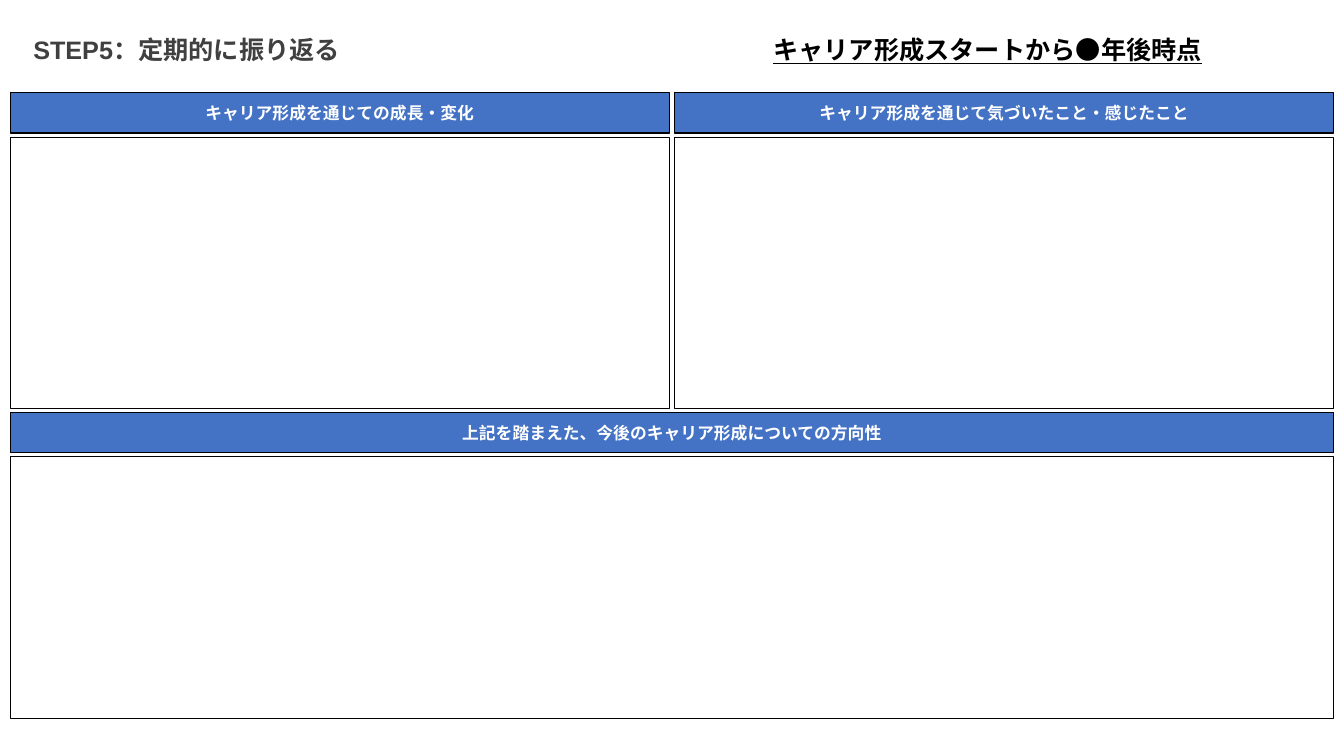
import pptx
import pptx.dml.color
import pptx.enum.shapes
import pptx.enum.text
import pptx.oxml
import pptx.oxml.ns
import pptx.util
from pptx.util import Inches

COLORS = {"header": "4472C4", "white": "FFFFFF", "black": "000000", "title": "404040"}
LATIN_FONT = "Arial"
JAPANESE_FONT = "Noto Sans CJK JP"
ALIGN = pptx.enum.text.PP_ALIGN
ANCHOR = pptx.enum.text.MSO_ANCHOR

# Layout in inches
LEFT, TOP, WIDTH = 0.1, 0.92, 13.13
COLUMN_GAP, ROW_GAP = 0.05, 0.04
HEADER_HEIGHT = 0.4


def rgb(name):
    return pptx.dml.color.RGBColor.from_string(COLORS[name])


def write_text(shape, text, size=12, color="black", font=LATIN_FONT,
               align=ALIGN.CENTER, anchor=ANCHOR.TOP, underline=None, wrap=True,
               fit=pptx.enum.text.MSO_AUTO_SIZE.NONE):
    frame = shape.text_frame
    frame.word_wrap = wrap
    frame.auto_size = fit
    frame.vertical_anchor = anchor
    para = frame.paragraphs[0]
    para.alignment = align
    span = para.add_run()
    span.text = text
    span.font.size = pptx.util.Pt(size)
    span.font.bold = True
    span.font.underline = underline
    span.font.color.rgb = rgb(color)
    span.font.name = font
    # Typeface for the Japanese characters
    east_asian = pptx.oxml.parse_xml(
        f'<a:ea {pptx.oxml.ns.nsdecls("a")} typeface="{JAPANESE_FONT}"/>')
    span.font.fill._xPr.append(east_asian)


def add_panel(page, left, top, width, height, fill):
    panel = page.shapes.add_shape(
        pptx.enum.shapes.MSO_SHAPE.RECTANGLE,
        Inches(left), Inches(top), Inches(width), Inches(height))
    panel.shadow.inherit = False
    panel.fill.solid()
    panel.fill.fore_color.rgb = rgb(fill)
    panel.line.color.rgb = rgb("black")
    panel.line.width = pptx.util.Pt(0.75)
    return panel


def add_section(page, heading, left, top, width, height):
    """A heading bar above an empty answer area, filling the given box."""
    header = add_panel(page, left, top, width, HEADER_HEIGHT, "header")
    write_text(header, heading, color="white", anchor=ANCHOR.MIDDLE, wrap=False)
    offset = HEADER_HEIGHT + ROW_GAP
    add_panel(page, left, top + offset, width, height - offset, "white")


def add_heading_row(page, left, top, height):
    """The step title on the left and the point in time on the right."""
    fit = pptx.enum.text.MSO_AUTO_SIZE.SHAPE_TO_FIT_TEXT
    title = page.shapes.title
    title.left, title.top = Inches(left), Inches(top)
    title.width, title.height = Inches(8.86), Inches(height)
    write_text(title, "STEP5：定期的に振り返る", size=18, color="title",
               align=ALIGN.LEFT, fit=fit)
    period = page.shapes.add_textbox(
        Inches(left + 6.94), Inches(top), Inches(5.25), Inches(height))
    write_text(period, "キャリア形成スタートから●年後時点", size=18,
               font=JAPANESE_FONT, underline=True, fit=fit)


def build_review_page(deck):
    page = deck.slides.add_slide(deck.slide_layouts[5])
    add_heading_row(page, 0.23, 0.29, 0.4)

    # Two columns looking back
    column_width = (WIDTH - COLUMN_GAP) / 2
    upper_height = 3.13
    headings = ["キャリア形成を通じての成長・変化",
                "キャリア形成を通じて気づいたこと・感じたこと"]
    for index, heading in enumerate(headings):
        left = LEFT + index * (column_width + COLUMN_GAP)
        add_section(page, heading, left, TOP, column_width, upper_height)

    # Full-width section looking ahead
    add_section(page, "上記を踏まえた、今後のキャリア形成についての方向性",
                LEFT, TOP + upper_height + ROW_GAP, WIDTH, 3.04)


def main():
    deck = pptx.Presentation()
    deck.slide_width, deck.slide_height = Inches(13.33), Inches(7.5)
    build_review_page(deck)
    deck.save("out.pptx")


if __name__ == "__main__":
    main()
